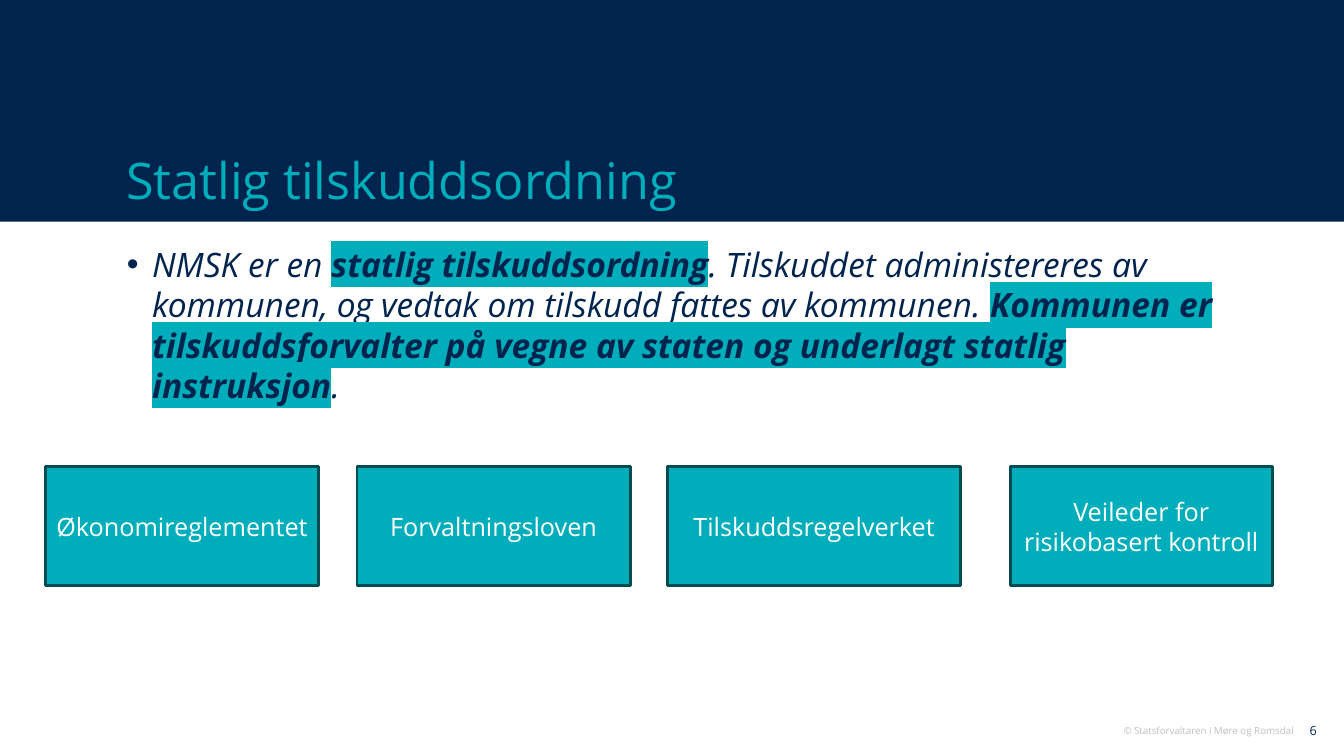
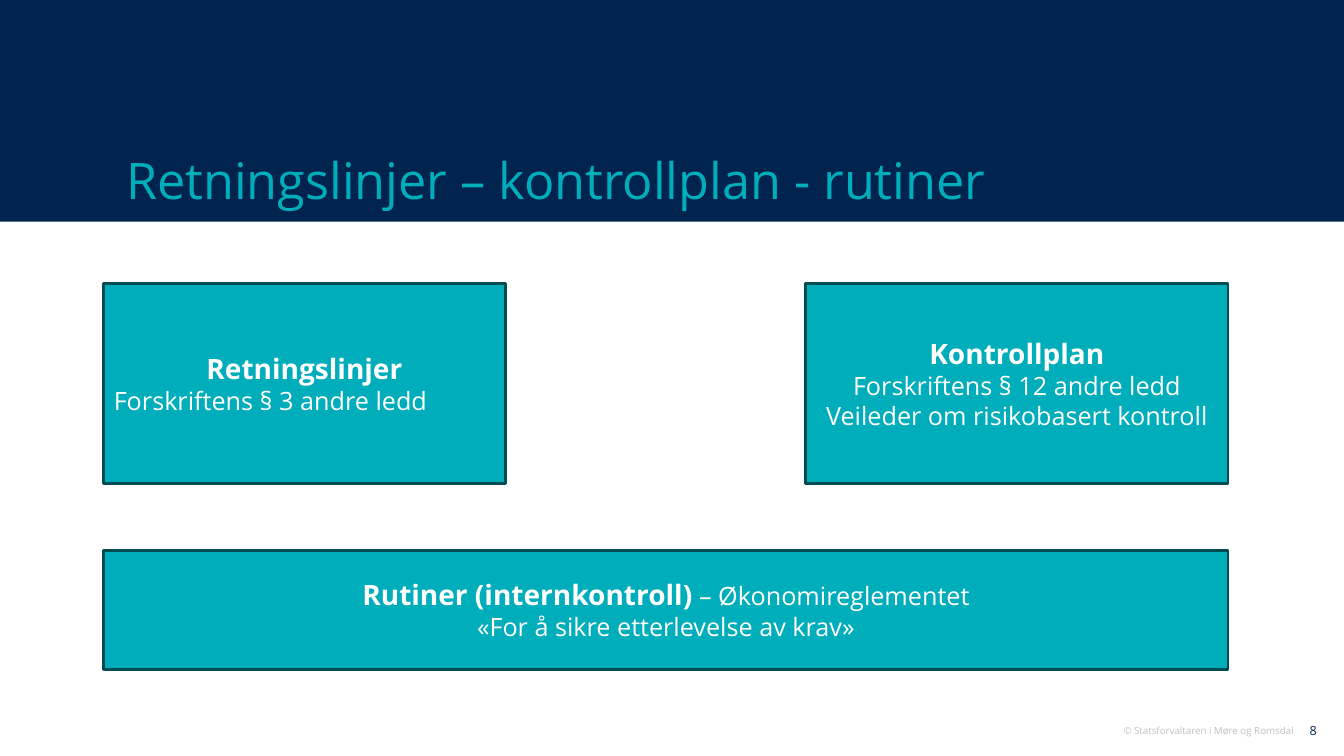
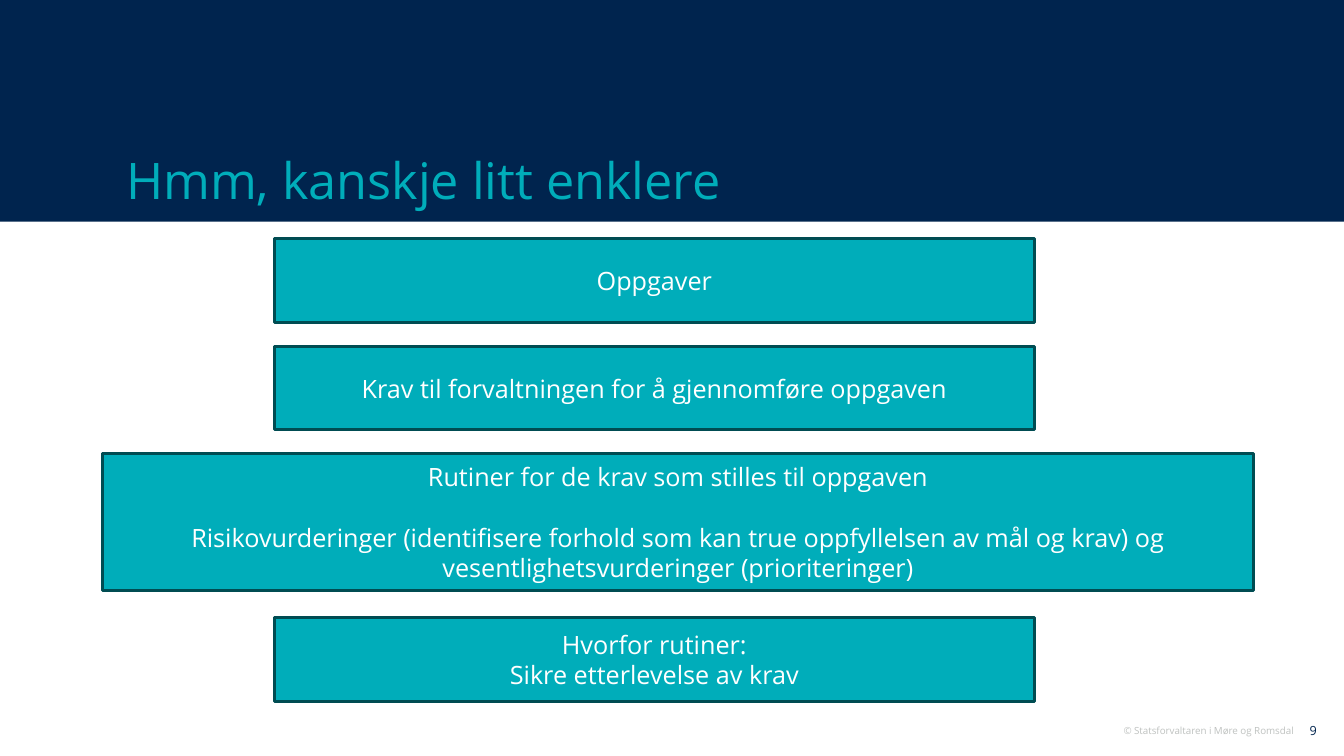
from lxml import etree
from pptx import Presentation
from pptx import util as u
from pptx.dml.color import RGBColor
from pptx.enum import shapes, text
from pptx.oxml.ns import qn

NAVY = RGBColor(0x00, 0x24, 0x4E)
TEAL = RGBColor(0x00, 0xAD, 0xBA)
DARK_TEAL = RGBColor(0x00, 0x4C, 0x52)
GREY = RGBColor(0xBF, 0xC2, 0xC0)
WHITE = RGBColor(0xFF, 0xFF, 0xFF)

FONT = "Open Sans"
LEFT, CENTER, RIGHT = text.PP_ALIGN.LEFT, text.PP_ALIGN.CENTER, text.PP_ALIGN.RIGHT
TOP, MIDDLE, BOTTOM = text.MSO_ANCHOR.TOP, text.MSO_ANCHOR.MIDDLE, text.MSO_ANCHOR.BOTTOM


class Deck:
    def __init__(self):
        self.prs = Presentation()
        self.prs.slide_width = u.Inches(13.33)
        self.prs.slide_height = u.Inches(7.5)
        self.slide = None

    def area(self, left, top, width, height):
        """Turn percentages of the slide into lengths."""
        across, down = self.prs.slide_width / 100, self.prs.slide_height / 100
        return [int(v) for v in (left * across, top * down, width * across, height * down)]

    def style(self, run, size, color, bold=False, italic=False):
        font = run.font
        font.name, font.size = FONT, u.Pt(size)
        font.bold, font.italic = bold, italic
        font.color.rgb = color

    def highlight(self, run, color):
        mark = etree.Element(qn("a:highlight"))
        etree.SubElement(mark, qn("a:srgbClr"), val=str(color))
        run.font._element.find(qn("a:latin")).addprevious(mark)

    def frame(self, shape, anchor):
        frame = shape.text_frame
        frame.word_wrap = True
        frame.auto_size = text.MSO_AUTO_SIZE.NONE
        frame.vertical_anchor = anchor
        return frame

    def rectangle(self, area, fill):
        box = self.slide.shapes.add_shape(shapes.MSO_SHAPE.RECTANGLE, *self.area(*area))
        box.shadow.inherit = False
        box.fill.solid()
        box.fill.fore_color.rgb = fill
        box.line.fill.background()
        return box

    def label(self, area, content, size, color, anchor=TOP):
        box = self.slide.shapes.add_textbox(*self.area(*area))
        frame = self.frame(box, anchor)
        frame.text = content
        frame.paragraphs[0].alignment = RIGHT
        self.style(frame.paragraphs[0].runs[0], size, color)

    def new_slide(self, heading, number):
        self.slide = self.prs.slides.add_slide(self.prs.slide_layouts[5])
        self.rectangle((0, 0, 100, 29.33), NAVY)
        self.label((94.67, 94.93, 4.05, 3.47), str(number), 9, NAVY, MIDDLE)
        self.label((81.4, 95.2, 15.6, 2.93), "© Statsforvaltaren i Møre og Romsdal", 7, GREY)
        title = self.slide.shapes.title
        self.slide.shapes._spTree.append(title._element)
        title.left, title.top, title.width, title.height = self.area(8.63, 12.67, 82.67, 15.73)
        frame = self.frame(title, BOTTOM)
        frame.text = heading
        frame.paragraphs[0].alignment = LEFT
        self.style(frame.paragraphs[0].runs[0], 36, TEAL)

    def bullet(self, area, parts):
        frame = self.frame(self.slide.shapes.add_textbox(*self.area(*area)), TOP)
        paragraph = frame.paragraphs[0]
        props = paragraph._p.get_or_add_pPr()
        props.set("marL", str(u.Inches(0.25)))
        props.set("indent", str(-u.Inches(0.25)))
        etree.SubElement(props, qn("a:buFont"), typeface="Arial")
        etree.SubElement(props, qn("a:buChar"), char="•")
        for content, stressed in parts:
            run = paragraph.add_run()
            run.text = content
            self.style(run, 24, NAVY, bold=stressed, italic=True)
            if stressed:
                self.highlight(run, TEAL)

    def card(self, area, *lines, lead="", align=CENTER, gap=0):
        """Draw a teal card: a bold lead opens it, align and gap apply to its last line."""
        box = self.rectangle(area, TEAL)
        box.line.color.rgb = DARK_TEAL
        box.line.width = u.Pt(2)
        frame = self.frame(box, MIDDLE)
        frame.text = "\n".join(lines)
        for paragraph in frame.paragraphs:
            paragraph.alignment = CENTER
            for run in paragraph.runs:
                self.style(run, 18, WHITE)
        if lead:
            opening = frame.paragraphs[0]
            rest = lines[0][len(lead):]
            opening.text = lead
            self.style(opening.runs[0], 20, WHITE, bold=True)
            if rest:
                tail = opening.add_run()
                tail.text = rest
                self.style(tail, 18, WHITE)
        last = frame.paragraphs[-1]
        last.alignment = align
        if gap:
            last.space_before = u.Pt(gap)


def grant_scheme(deck):
    deck.new_slide("Statlig tilskuddsordning", 6)
    deck.bullet((8.7, 31.6, 82.67, 60.4), [
        ("NMSK er en ", False),
        ("statlig tilskuddsordning", True),
        (". Tilskuddet administereres av kommunen, og vedtak om tilskudd fattes av kommunen. ", False),
        ("Kommunen er tilskuddsforvalter på vegne av staten og underlagt statlig instruksjon", True),
        (".", False),
    ])
    for rule, left, width in [
        ("Økonomireglementet", 3.38, 20.33),
        ("Forvaltningsloven", 26.56, 20.33),
        ("Tilskuddsregelverket", 49.66, 21.83),
        ("Veileder for risikobasert kontroll", 75.17, 19.5),
    ]:
        deck.card((left, 61.73, width, 15.73), rule)


def guidelines(deck):
    deck.new_slide("Retningslinjer – kontrollplan - rutiner", 8)
    left, width, plan_width = 7.73, 83.65, 31.43
    top, height = 37.47, 26.53
    deck.card((left, top, 29.86, height), "Retningslinjer", "Forskriftens § 3 andre ledd",
              lead="Retningslinjer", align=LEFT)
    deck.card((left + width - plan_width, top, plan_width, height), "Kontrollplan",
              "Forskriftens § 12 andre ledd", "Veileder om risikobasert kontroll",
              lead="Kontrollplan")
    deck.card((left, 72.8, width, 15.73), "Rutiner (internkontroll) – Økonomireglementet",
              "«For å sikre etterlevelse av krav»", lead="Rutiner (internkontroll)")


def simpler(deck):
    deck.new_slide("Hmm, kanskje litt enklere", 9)
    for top, lines in [
        (31.6, ["Oppgaver"]),
        (45.8, ["Krav til forvaltningen for å gjennomføre oppgaven"]),
        (81.73, ["Hvorfor rutiner:", "Sikre etterlevelse av krav"]),
    ]:
        deck.card((20.41, top, 56.56, 11.07), *lines)
    deck.card((7.65, 60, 85.6, 18.13), "Rutiner for de krav som stilles til oppgaven",
              "Risikovurderinger (identifisere forhold som kan true oppfyllelsen av mål og krav) "
              "og vesentlighetsvurderinger (prioriteringer)", gap=21.6)


def main():
    deck = Deck()
    for build in (grant_scheme, guidelines, simpler):
        build(deck)
    deck.prs.save("out.pptx")


if __name__ == "__main__":
    main()
